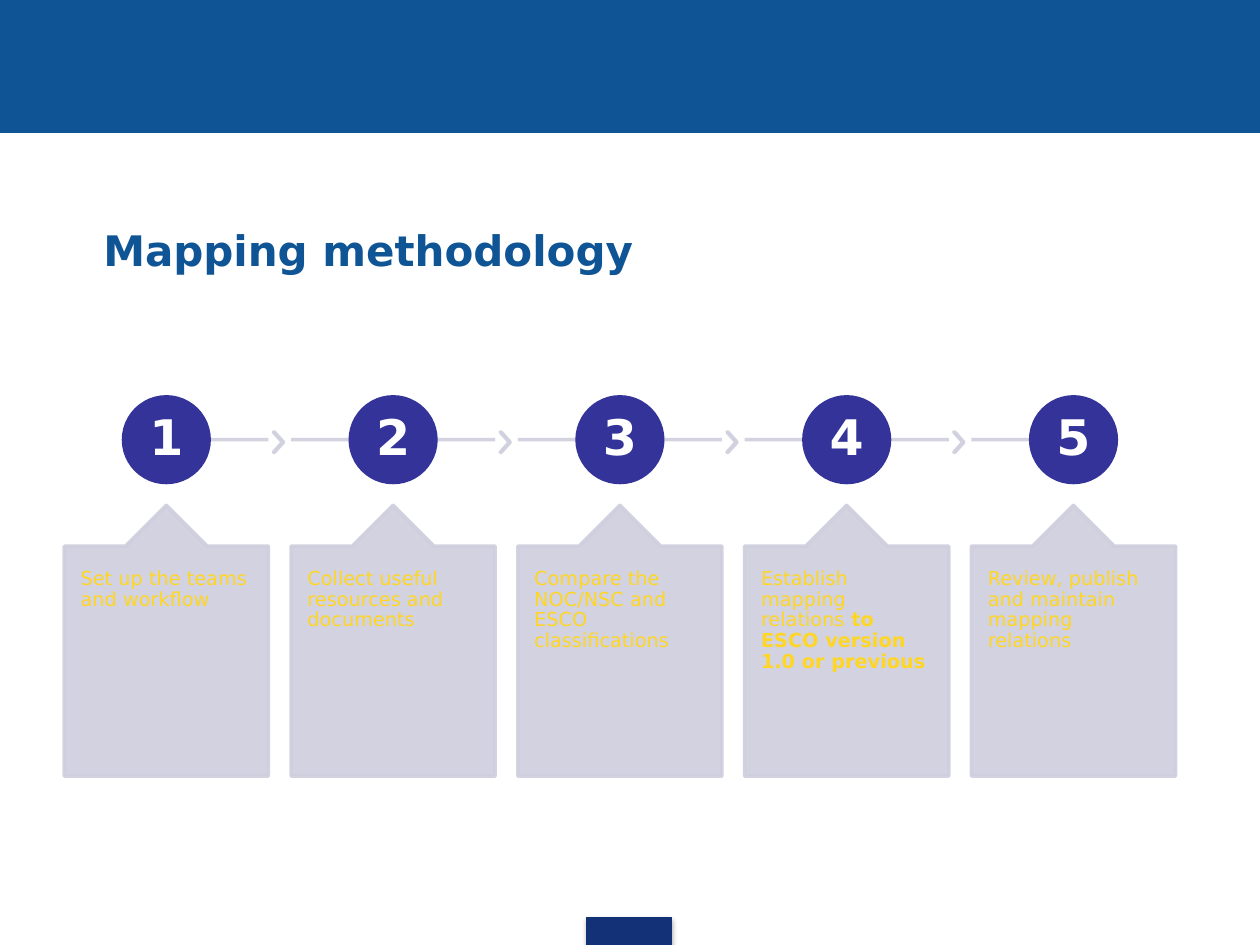
import pptx
import pptx.dml.color
import pptx.enum.shapes
import pptx.enum.text
import pptx.oxml
import pptx.oxml.ns
import pptx.util
from lxml import etree

Inches, Pt = pptx.util.Inches, pptx.util.Pt
SHAPE = pptx.enum.shapes.MSO_SHAPE
ALIGN = pptx.enum.text.PP_ALIGN
ANCHOR = pptx.enum.text.MSO_ANCHOR
qn = pptx.oxml.ns.qn

FONT = "DejaVu Sans"
COLORS = {
    "band": "0F5494",
    "badge": "133176",
    "circle": "333399",
    "pale": "CECEDE",
    "yellow": "FFD624",
    "white": "FFFFFF",
}
TITLE = "Mapping methodology"
STEPS = [
    [("Set up the teams and workflow", False)],
    [("Collect useful resources and documents", False)],
    [("Compare the NOC/NSC and ESCO classifications", False)],
    [("Establish mapping relations", False), (" to ESCO version 1.0 or previous", True)],
    [("Review, publish and maintain mapping relations", False)],
]

LEFT, PITCH, CARD_W = 0.51, 1.8, 1.62
CARD_TOP, CARD_H = 4.01, 2.15
CIRCLE_TOP, CIRCLE_D = 3.15, 0.68
LINE_Y = CIRCLE_TOP + CIRCLE_D / 2
BADGE_SHADOW = (
    '<a:effectLst xmlns:a="http://schemas.openxmlformats.org/drawingml/2006/main">'
    '<a:outerShdw blurRad="39370" dist="22860" dir="5400000" rotWithShape="0">'
    '<a:srgbClr val="000000"><a:alpha val="35000"/></a:srgbClr>'
    "</a:outerShdw></a:effectLst>"
)


def rgb(name):
    return pptx.dml.color.RGBColor.from_string(COLORS[name])


def set_alpha(sp, percent):
    for clr in sp._element.spPr.iter(qn("a:srgbClr")):
        etree.SubElement(clr, qn("a:alpha")).set("val", str(percent * 1000))


def add_shape(s, kind, box, color, width=2, alpha=None, adj=()):
    sp = s.shapes.add_shape(kind, *(Inches(v) for v in box))
    sp.shadow.inherit = False
    for i, value in enumerate(adj):
        sp.adjustments[i] = value
    sp.fill.solid()
    sp.fill.fore_color.rgb = rgb(color)
    sp.line.color.rgb = rgb(color)
    sp.line.width = Pt(width)
    if alpha:
        set_alpha(sp, alpha)
    return sp


def add_line(s, x1, x2, y):
    line = s.shapes.add_connector(
        pptx.enum.shapes.MSO_CONNECTOR.STRAIGHT, Inches(x1), Inches(y), Inches(x2), Inches(y)
    )
    line.line.color.rgb = rgb("pale")
    line.line.width = Pt(2)
    set_alpha(line, 90)
    etree.SubElement(line._element.spPr, qn("a:effectLst"))


def write_text(sp, runs, size, color, margins, align=ALIGN.LEFT, anchor=ANCHOR.TOP, spacing=0.9):
    tf = sp.text_frame
    tf.word_wrap = True
    tf.vertical_anchor = anchor
    tf.margin_left, tf.margin_top, tf.margin_right, tf.margin_bottom = map(Inches, margins)
    p = tf.paragraphs[0]
    p.alignment = align
    p.line_spacing = spacing
    for text, bold in runs:
        r = p.add_run()
        r.text = text
        r.font.name = FONT
        r.font.size = Pt(size)
        r.font.bold = bold
        r.font.color.rgb = rgb(color)


def add_step(s, index, runs):
    x = LEFT + index * PITCH
    center = x + CARD_W / 2
    last = index == len(STEPS) - 1
    add_line(s, center if index == 0 else x, center if last else x + CARD_W, LINE_Y)
    if not last:
        add_shape(s, SHAPE.CHEVRON, (x + 1.66, 3.43, 0.08, 0.16), "pale", alpha=90, adj=[0.9])
    circle = add_shape(
        s, SHAPE.OVAL, (center - CIRCLE_D / 2, CIRCLE_TOP, CIRCLE_D, CIRCLE_D), "circle"
    )
    write_text(circle, [(str(index + 1), True)], 28, "white", (0.03,) * 4,
               align=ALIGN.CENTER, anchor=ANCHOR.MIDDLE)
    card = add_shape(s, SHAPE.UP_ARROW_CALLOUT, (x, CARD_TOP, CARD_W, CARD_H), "pale",
                     alpha=90, adj=[0.5, 0.2, 0.2, 1])
    write_text(card, runs, 11, "yellow", (0.13, 0.18, 0.13, 0.18))


def main():
    prs = pptx.Presentation()
    prs.slide_width, prs.slide_height = Inches(10), Inches(7.5)
    s = prs.slides.add_slide(prs.slide_layouts[6])

    add_shape(s, SHAPE.RECTANGLE, (0, 0, 10, 1.05), "band", width=0.75)
    badge = add_shape(s, SHAPE.RECTANGLE, (4.66, 7.28, 0.67, 0.22), "badge", width=0.75)
    sp_pr = badge._element.spPr
    sp_pr.replace(sp_pr.find(qn("a:effectLst")), pptx.oxml.parse_xml(BADGE_SHADOW))

    title = s.shapes.add_textbox(Inches(0.43), Inches(1.47), Inches(9), Inches(1.02))
    write_text(title, [(TITLE, True)], 24, "band", (0.39, 0.05, 0.1, 0.05),
               anchor=ANCHOR.MIDDLE, spacing=1.0)

    for index, runs in enumerate(STEPS):
        add_step(s, index, runs)

    prs.save("out.pptx")


if __name__ == "__main__":
    main()
